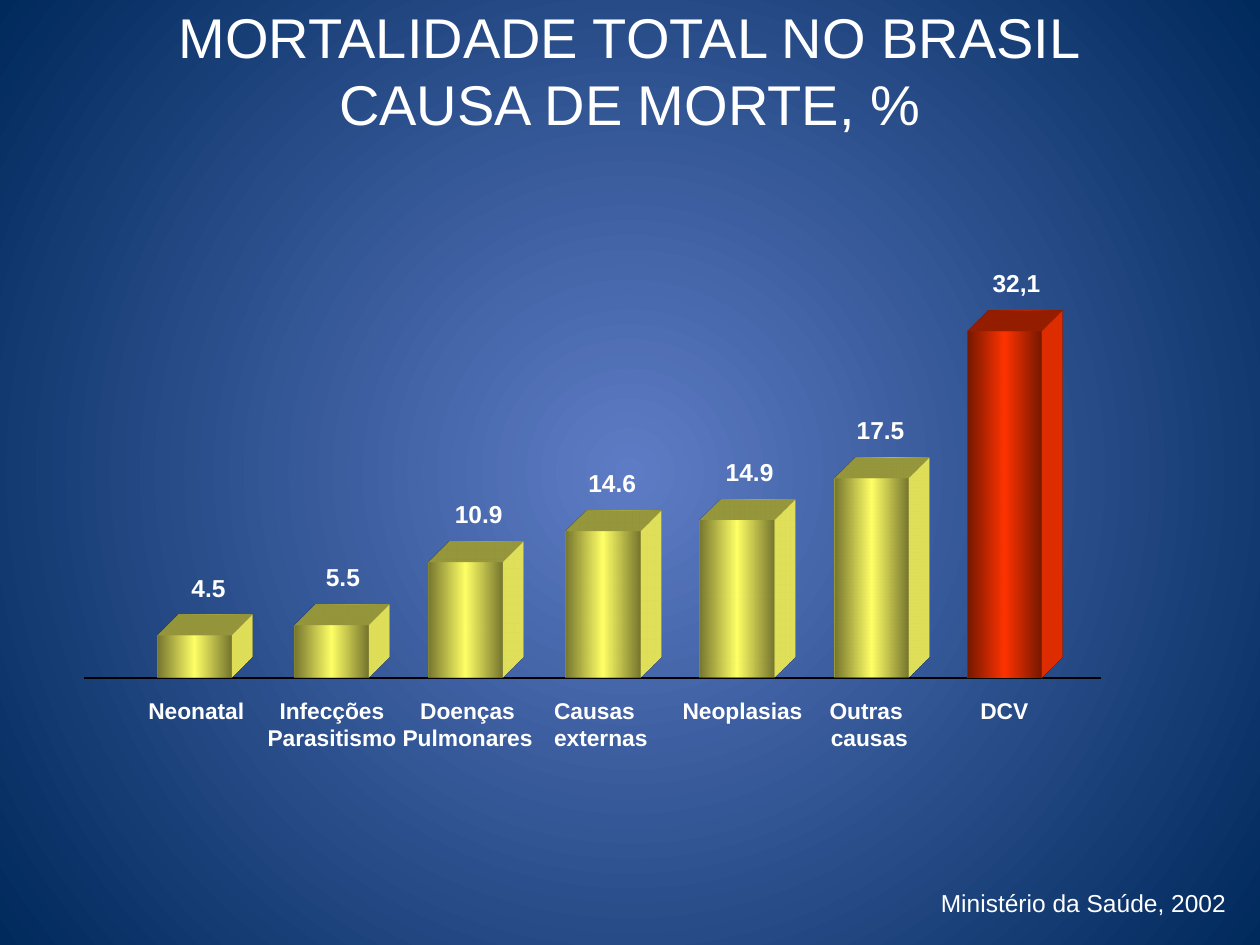
from dataclasses import dataclass

from lxml.etree import SubElement
from pptx import Presentation
from pptx.dml.color import RGBColor
from pptx.enum.shapes import MSO_CONNECTOR, MSO_SHAPE
from pptx.enum.text import MSO_ANCHOR, MSO_AUTO_SIZE, PP_ALIGN
from pptx.oxml import parse_xml
from pptx.oxml.ns import nsdecls, qn
from pptx.util import Cm, Pt


@dataclass(frozen=True)
class Theme:
    font: str = "Arial"
    text: str = "FFFFFF"
    axis: str = "000000"
    glow: str = "5E7CC5"
    night: str = "00295C"
    yellow: tuple = ("76762F", "FFFF66")
    red: tuple = ("761800", "FF3300")
    title_size: int = 32
    value_size: int = 14
    label_size: int = 13
    source_size: int = 14


theme = Theme()


def paint_gradient(fill, owner, colors, direction):
    fill.gradient()
    gradient = owner.find(".//" + qn("a:gradFill"))
    for child in list(gradient):
        gradient.remove(child)
    stops = SubElement(gradient, qn("a:gsLst"))
    for index, color in enumerate(colors):
        position = index * 100000 // (len(colors) - 1)
        stop = SubElement(stops, qn("a:gs"), pos=str(position))
        SubElement(stop, qn("a:srgbClr"), val=color)
    gradient.append(parse_xml(direction))


def write_text(box, lines, size, bold=False, align=PP_ALIGN.LEFT, wrap=False):
    frame = box.text_frame
    frame.word_wrap = wrap
    frame.auto_size = MSO_AUTO_SIZE.SHAPE_TO_FIT_TEXT
    frame.vertical_anchor = MSO_ANCHOR.TOP
    for index, line in enumerate(lines):
        para = frame.add_paragraph() if index else frame.paragraphs[0]
        para.alignment = align
        span = para.add_run()
        span.text = line
        span.font.name = theme.font
        span.font.size = Pt(size)
        span.font.bold = bold
        span.font.color.rgb = RGBColor.from_string(theme.text)


deck = Presentation()
deck.slide_width, deck.slide_height = Cm(25.4), Cm(19.05)
page = deck.slides.add_slide(deck.slide_layouts[5])
shapes = page.shapes

paint_gradient(
    page.background.fill, page.element, (theme.glow, theme.night),
    f'<a:path {nsdecls("a")} path="circle">'
    '<a:fillToRect l="50000" t="50000" r="50000" b="50000"/></a:path>',
)

title = shapes.title
title.left, title.top, title.width, title.height = Cm(0), Cm(-0.08), Cm(25.4), Cm(2.97)
write_text(title, ("MORTALIDADE TOTAL NO BRASIL", "CAUSA DE MORTE, %"),
           theme.title_size, align=PP_ALIGN.CENTER, wrap=True)

source = shapes.add_textbox(Cm(17.3), Cm(17.78), Cm(7.67), Cm(0.85))
write_text(source, ("Ministério da Saúde, 2002",), theme.source_size,
           align=PP_ALIGN.RIGHT, wrap=True)

baseline = 13.67
axis = shapes.add_connector(MSO_CONNECTOR.STRAIGHT, Cm(1.7), Cm(baseline), Cm(22.2), Cm(baseline))
axis.line.color.rgb = RGBColor.from_string(theme.axis)
axis.line.width = Pt(0.75)
SubElement(axis.element.spPr, qn("a:effectLst"))

bar_width = 1.5
value_gap = 1.4
label_top = 13.92
left, center = PP_ALIGN.LEFT, PP_ALIGN.CENTER
causes = (
    (("Neonatal",), left, 2.74, 2.46, 3.18, 0.85, "4.5", 3.61, theme.yellow),
    (("Infecções", "Parasitismo"), center, 5.13, 3.12, 5.94, 1.06, "5.5", 6.32, theme.yellow),
    (("Doenças", "Pulmonares"), center, 7.85, 3.15, 8.64, 2.33, "10.9", 8.92, theme.yellow),
    (("Causas", "externas"), left, 10.92, 2.41, 11.41, 2.96, "14.6", 11.61, theme.yellow),
    (("Neoplasias",), left, 13.51, 2.95, 14.11, 3.18, "14.9", 14.38, theme.yellow),
    (("Outras ", "causas"), center, 16.46, 2.13, 16.82, 4.02, "17.5", 17.02, theme.yellow),
    (("DCV",), center, 19.51, 1.47, 19.5, 6.99, "32,1", 19.76, theme.red),
)

for lines, align, label_left, label_width, bar_left, height, value, value_left, colors in causes:
    top = baseline - height
    edge, middle = colors
    bar = shapes.add_shape(MSO_SHAPE.RECTANGLE, Cm(bar_left), Cm(top), Cm(bar_width), Cm(height))
    bar.shadow.inherit = False
    bar.line.fill.background()
    paint_gradient(bar.fill, bar.element, (edge, middle, edge),
                   f'<a:lin {nsdecls("a")} ang="0" scaled="1"/>')
    properties = bar.element.spPr
    properties.append(parse_xml(
        f'<a:scene3d {nsdecls("a")}><a:camera prst="legacyObliqueTopRight"/>'
        '<a:lightRig rig="legacyFlat3" dir="b"/></a:scene3d>'))
    properties.append(parse_xml(
        f'<a:sp3d {nsdecls("a")} extrusionH="430200" prstMaterial="legacyMatte">'
        f'<a:extrusionClr><a:srgbClr val="{middle}"/></a:extrusionClr></a:sp3d>'))

    value_width = 1.19 if len(value) == 3 else 1.47
    value_box = shapes.add_textbox(Cm(value_left), Cm(top - value_gap), Cm(value_width), Cm(0.85))
    write_text(value_box, (value,), theme.value_size, bold=True)

    label_height = 0.27 + 0.54 * len(lines)
    label_box = shapes.add_textbox(Cm(label_left), Cm(label_top), Cm(label_width), Cm(label_height))
    write_text(label_box, lines, theme.label_size, bold=True, align=align)

deck.save("out.pptx")
